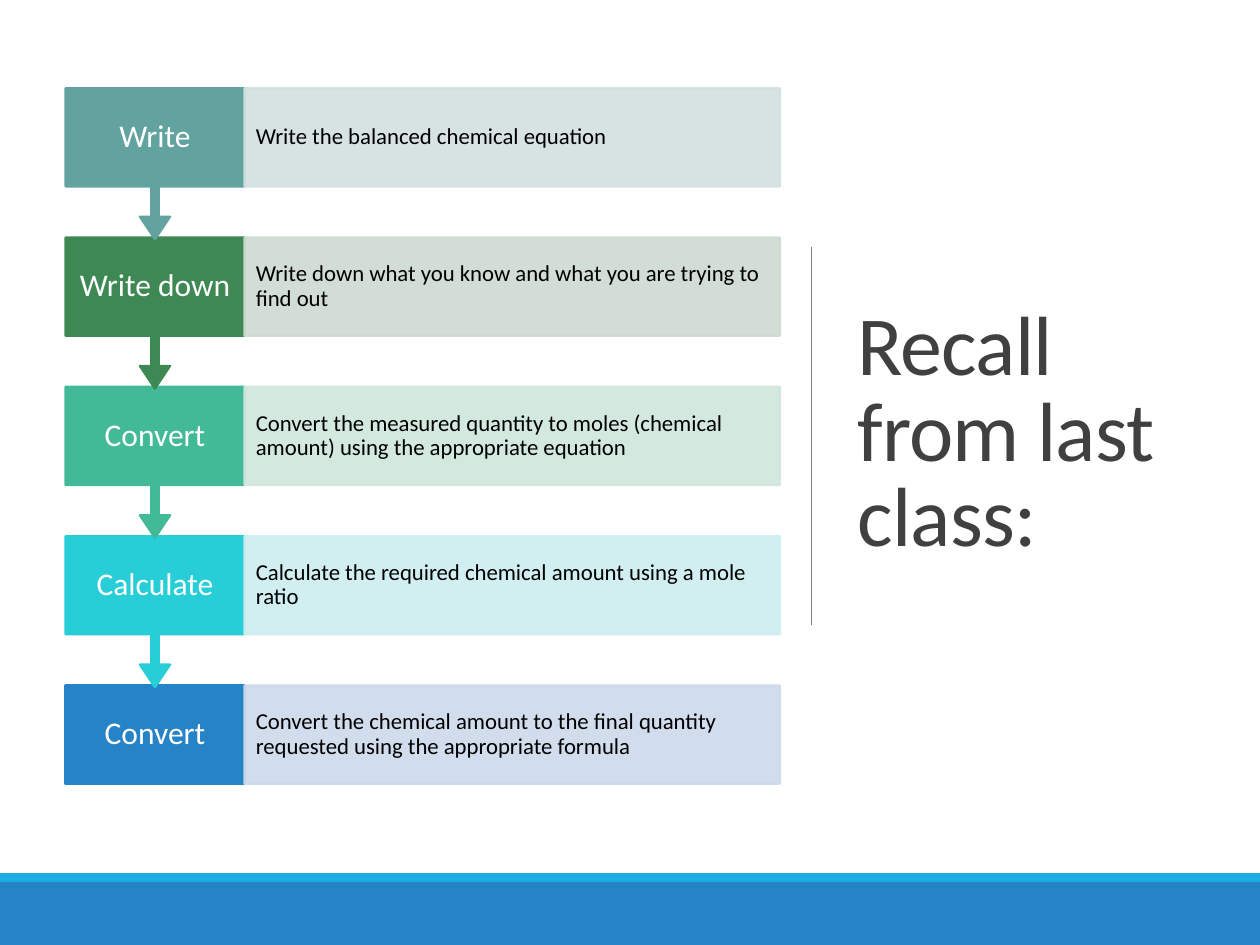
from pptx import Presentation
from pptx.dml.color import RGBColor
from pptx.enum.shapes import MSO_CONNECTOR, MSO_SHAPE
from pptx.enum.text import MSO_ANCHOR, PP_ALIGN
from pptx.oxml.ns import qn
from pptx.util import Inches, Pt
from lxml.etree import SubElement

TITLE = "Recall from last class:"
STEPS = [  # verb, description, strong colour, pale colour
    ("Write", "Write the balanced chemical equation", "62A39F", "D3E0DF"),
    ("Write down", "Write down what you know and what you are trying to find out",
     "3E8853", "CEDAD1"),
    ("Convert", "Convert the measured quantity to moles (chemical amount) "
     "using the appropriate equation", "42BA97", "CFE7DD"),
    ("Calculate", "Calculate the required chemical amount using a mole ratio",
     "27CED7", "CDEDF0"),
    ("Convert", "Convert the chemical amount to the final quantity requested "
     "using the appropriate formula", "2683C6", "CDD9EA"),
]
BANDS = [(6.93, 0.07, "1CADE4"), (7, 0.5, "2683C6")]  # top, height, colour

LEFT, TOP, PITCH = 0.52, 0.7, 1.185
VERB_W, DESC_W = 1.42, 4.25
BOX_H, CALLOUT_H = 0.78, 1.2
CALLOUT_ADJ = (0.05, 0.1, 0.15, 0.65)


def rgb(color):
    return RGBColor.from_string(color)


def add_block(kind, x, y, w, h, color, line=False, alpha=None):
    """Add a flat shape, with an optional outline and opacity in percent."""
    sp = slide.shapes.add_shape(kind, Inches(x), Inches(y), Inches(w), Inches(h))
    sp.shadow.inherit = False
    sp.fill.solid()
    sp.fill.fore_color.rgb = rgb(color)
    if line:
        sp.line.color.rgb = rgb(color)
        sp.line.width = Pt(1.25)
    else:
        sp.line.fill.background()
    if alpha:
        for clr in sp._element.spPr.iter(qn("a:srgbClr")):
            SubElement(clr, qn("a:alpha"), val=str(alpha * 1000))
    return sp


def set_text(sp, text, size, color, align=PP_ALIGN.LEFT, spacing=0.9, inset=(0.1, 0.05)):
    tf = sp.text_frame
    tf.word_wrap = True
    tf.vertical_anchor = MSO_ANCHOR.MIDDLE
    tf.margin_left = tf.margin_right = Inches(inset[0])
    tf.margin_top = tf.margin_bottom = Inches(inset[1])
    p = tf.paragraphs[0]
    p.text = text
    p.alignment = align
    p.line_spacing = spacing
    r = p.runs[0]
    r.font.name = "Calibri"
    r.font.size = Pt(size)
    r.font.color.rgb = rgb(color)
    return r


prs = Presentation()
prs.slide_width, prs.slide_height = Inches(10), Inches(7.5)
slide = prs.slides.add_slide(prs.slide_layouts[6])

title = slide.shapes.add_textbox(Inches(6.71), Inches(0.69), Inches(2.77), Inches(5.53))
r = set_text(title, TITLE, 48, "404040", spacing=0.85)
r._r.get_or_add_rPr().set("spc", "-50")

divider = slide.shapes.add_connector(
    MSO_CONNECTOR.STRAIGHT, Inches(6.44), Inches(1.96), Inches(6.44), Inches(4.96))
divider.line.color.rgb = rgb("808080")
divider.line.width = Pt(0.5)
SubElement(divider._element.spPr, qn("a:effectLst"))

for y, h, color in BANDS:
    add_block(MSO_SHAPE.RECTANGLE, 0, y, 10, h, color)

# Bottom step first, so that each arrow tip lies over the box below it
last = len(STEPS) - 1
for i, (verb, description, strong, pale) in reversed(list(enumerate(STEPS))):
    y = TOP + i * PITCH
    if i == last:
        box = add_block(MSO_SHAPE.RECTANGLE, LEFT, y, VERB_W, BOX_H, strong, line=True)
    else:
        box = add_block(MSO_SHAPE.DOWN_ARROW_CALLOUT, LEFT, y, VERB_W, CALLOUT_H,
                        strong, line=True)
        for k, value in enumerate(CALLOUT_ADJ):
            box.adjustments[k] = value
    set_text(box, verb, 18, "FFFFFF", PP_ALIGN.CENTER, inset=(0.1, 0.14))

    panel = add_block(MSO_SHAPE.RECTANGLE, LEFT + VERB_W, y, DESC_W, BOX_H, pale,
                      line=True, alpha=90)
    set_text(panel, description, 13, "000000", inset=(0.09, 0.18))

prs.save("out.pptx")
